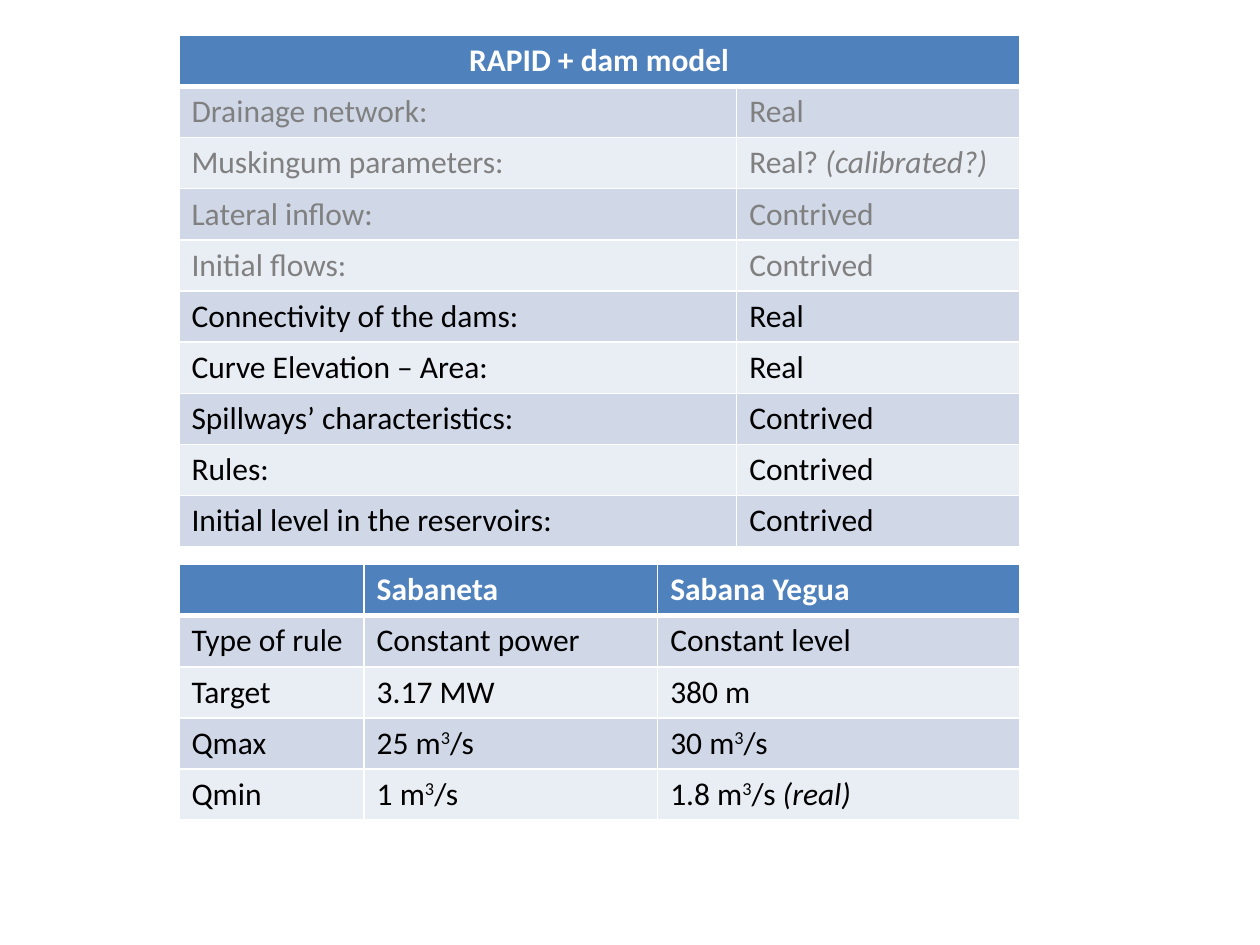
from lxml import etree
from pptx import Presentation
from pptx.dml.color import RGBColor
from pptx.enum.text import PP_ALIGN
from pptx.oxml.ns import qn
from pptx.util import Inches, Pt

LEFT, CENTER = PP_ALIGN.LEFT, PP_ALIGN.CENTER
COLORS = {"header": "4F81BD", "odd": "D0D8E8", "even": "E9EDF4",
          "white": "FFFFFF", "black": "000000", "gray": "808080"}
SUPER, ITALIC = "super", "italic"
CUBIC = [("3", SUPER), ("/s", None)]

MODEL_ROWS = [
    ["RAPID + dam model", ""],
    ["Drainage network:", "Real"],
    ["Muskingum parameters:", [("Real? ", None), ("(calibrated?)", ITALIC)]],
    ["Lateral inflow:", "Contrived"],
    ["Initial flows:", "Contrived"],
    ["Connectivity of the dams:", "Real"],
    ["Curve Elevation – Area:", "Real"],
    ["Spillways’ characteristics:", "Contrived"],
    ["Rules:", "Contrived"],
    ["Initial level in the reservoirs:", "Contrived"],
]
RULE_ROWS = [
    ["", "Sabaneta", "Sabana Yegua"],
    ["Type of rule", "Constant power", "Constant level"],
    ["Target", "3.17 MW", "380 m"],
    ["Qmax", [("25 m", None), *CUBIC], [("30 m", None), *CUBIC]],
    ["Qmin", [("1 m", None), *CUBIC],
     [("1.8 m", None), ("3", SUPER), ("/s ", None), ("(real)", ITALIC)]],
]


def rgb(name):
    return RGBColor.from_string(COLORS[name])


def write(tf, text, color="black", bold=False, align=LEFT, size=18):
    p = tf.paragraphs[0]
    p.alignment = align
    parts = [(text, None)] if isinstance(text, str) else text
    for part, style in parts:
        if not part:
            continue
        r = p.add_run()
        r.text = part
        r.font.name = "Calibri"
        r.font.size = Pt(size)
        r.font.bold = bold
        r.font.italic = style == ITALIC
        r.font.color.rgb = rgb(color)
        if style == SUPER:
            r.font._element.set("baseline", "30000")


def set_borders(cell, widths):
    tcPr = cell._tc.get_or_add_tcPr()
    for side, width in zip("LRTB", widths):
        ln = etree.SubElement(tcPr, qn(f"a:ln{side}"), w=str(Pt(width)))
        fill = etree.SubElement(ln, qn("a:solidFill"))
        etree.SubElement(fill, qn("a:srgbClr"), val=COLORS["white"])


def add_grid(s, box, weights, rows, muted=(), title=False):
    left, top, width, height = box
    frame = s.shapes.add_table(len(rows), len(weights), *map(Inches, box))
    table = frame.table
    for col, weight in zip(table.columns, weights):
        col.width = Inches(width * weight / sum(weights))
    for i, row in enumerate(rows):
        table.rows[i].height = Inches(height / len(rows))
        header = i == 0
        fill = "header" if header else "odd" if i % 2 else "even"
        color = "white" if header else "gray" if i in muted else "black"
        for j, text in enumerate(row):
            cell = table.cell(i, j)
            set_borders(cell, (1, 1, 3 if i == 1 else 1, 3 if header else 1))
            cell.fill.solid()
            cell.fill.fore_color.rgb = rgb(fill)
            write(cell.text_frame, text, color=color, bold=header,
                  align=CENTER if header and title else LEFT)
    if title:
        table.cell(0, 0).merge(table.cell(0, len(weights) - 1))


def main():
    prs = Presentation()
    prs.slide_width, prs.slide_height = Inches(10), Inches(7.5)
    s = prs.slides.add_slide(prs.slide_layouts[6])
    left, width = 1.42, 6.67
    add_grid(s, (left, 4.48, width, 2.03), (1.47, 2.33, 2.87), RULE_ROWS)
    add_grid(s, (left, 0.28, width, 4.06), (4.42, 2.24), MODEL_ROWS,
             muted=range(1, 5), title=True)
    prs.save("out.pptx")


if __name__ == "__main__":
    main()
